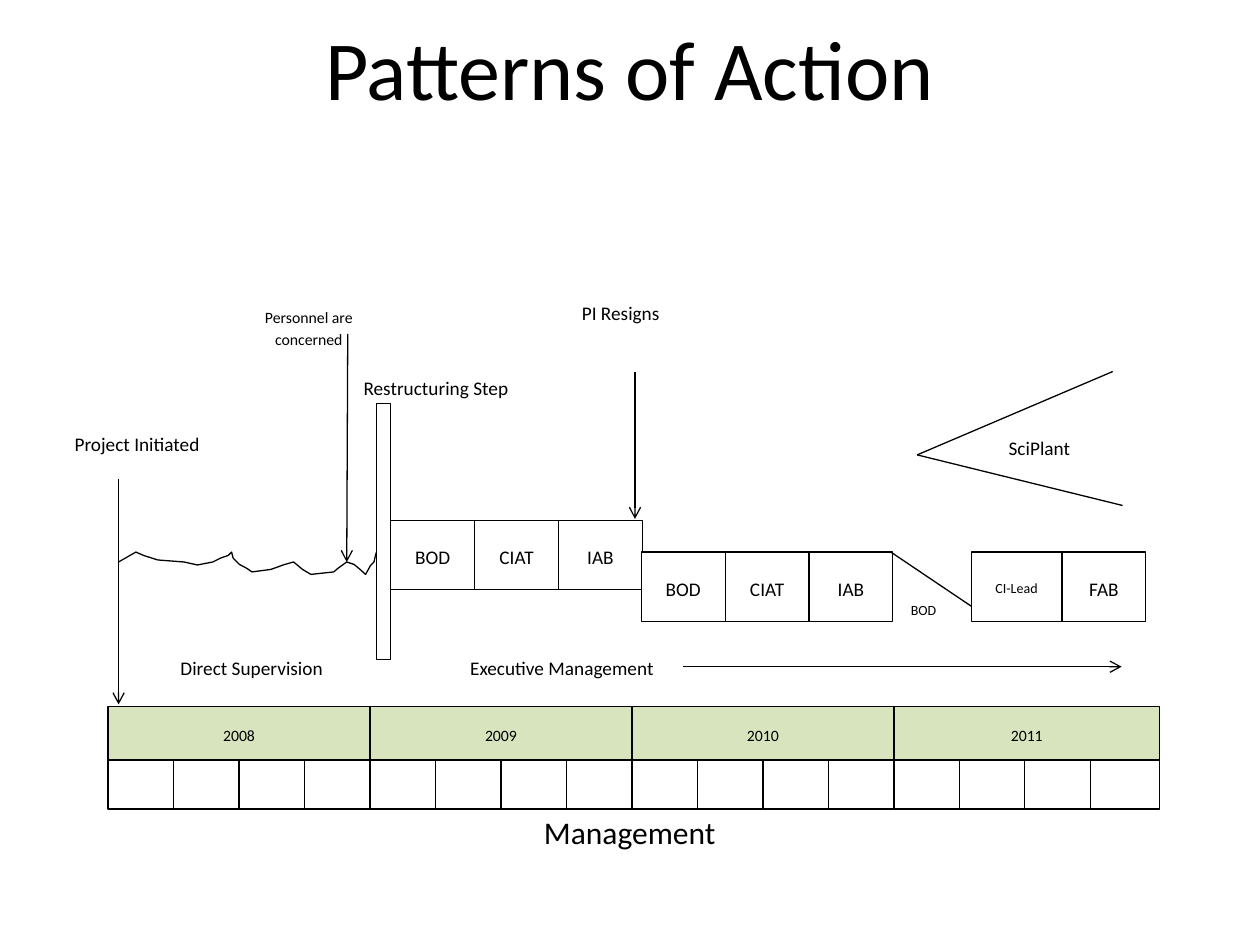
"""Builds the "Patterns of Action" management timeline slide."""
from lxml import etree
from pptx import Presentation
from pptx import util as u
from pptx.dml.color import RGBColor
from pptx.enum import shapes, text
from pptx.oxml import ns

BLACK = RGBColor(0x00, 0x00, 0x00)
WHITE = RGBColor(0xFF, 0xFF, 0xFF)
GREEN = RGBColor(0xD7, 0xE4, 0xBD)
TOP, MIDDLE = text.MSO_ANCHOR.TOP, text.MSO_ANCHOR.MIDDLE
LEFT, CENTER = text.PP_ALIGN.LEFT, text.PP_ALIGN.CENTER


class Timeline:
    """Holds the drawing style and the current slide."""

    font = "Calibri"
    stroke = u.Pt(0.75)

    def __init__(self, slide):
        self.slide = slide

    def letter(self, holder, words, size, anchor=MIDDLE, align=CENTER, spaced=True):
        frame = holder.text_frame
        frame.word_wrap = True
        frame.vertical_anchor = anchor
        paragraph = frame.paragraphs[0]
        paragraph.text = words
        paragraph.alignment = align
        paragraph.font.name = self.font
        paragraph.font.size = u.Pt(size)
        paragraph.font.color.rgb = BLACK
        if spaced:
            paragraph.line_spacing = 1.15
            paragraph.space_after = u.Pt(10)

    def outline(self, part):
        part.line.color.rgb = BLACK
        part.line.width = self.stroke

    def caption(self, words, area, size, anchor=MIDDLE, spaced=False):
        holder = self.slide.shapes.add_textbox(*map(u.Cm, area))
        self.letter(holder, words, size, anchor, spaced=spaced)

    def box(self, area, words="", size=11, fill=WHITE, framed=True, anchor=MIDDLE, align=CENTER):
        block = self.slide.shapes.add_shape(shapes.MSO_SHAPE.RECTANGLE, *map(u.Cm, area))
        block.shadow.inherit = False
        block.fill.solid()
        block.fill.fore_color.rgb = fill
        if framed:
            self.outline(block)
        else:
            block.line.fill.background()
        if words:
            self.letter(block, words, size, anchor, align)

    def line(self, start, end, arrow=False):
        link = self.slide.shapes.add_connector(
            shapes.MSO_CONNECTOR.STRAIGHT, *map(u.Cm, (*start, *end)))
        self.outline(link)
        properties = link._element.spPr
        if arrow:
            etree.SubElement(properties.find(ns.qn("a:ln")), ns.qn("a:tailEnd"), type="arrow")
        etree.SubElement(properties, ns.qn("a:effectLst"))

    def wave(self, points):
        start, *rest = [(u.Cm(x), u.Cm(y)) for x, y in points]
        builder = self.slide.shapes.build_freeform(*start)
        builder.add_line_segments(rest, close=False)
        curve = builder.convert_to_shape()
        curve.shadow.inherit = False
        curve.fill.background()
        self.outline(curve)


LABELS = [
    ("Personnel are concerned", (4.7, 5.26, 3.05, 2.67), 9, MIDDLE, CENTER),
    ("Restructuring Step", (7.04, 7.39, 3.5, 2.67), 11, TOP, CENTER),
    ("SciPlant", (19.81, 8.31, 2.29, 1.35), 11, MIDDLE, CENTER),
    ("Project Initiated", (1.19, 7.57, 3.15, 2.67), 11, MIDDLE, CENTER),
    ("PI Resigns", (11.48, 5.87, 2.87, 1.55), 11, TOP, LEFT),
    ("Direct Supervision", (2.84, 12.62, 4.47, 1.63), 11, MIDDLE, CENTER),
    ("Executive Management", (8.13, 12.67, 6.4, 1.52), 11, MIDDLE, CENTER),
]
SUPERVISION = [
    (2.39, 11.33), (2.74, 11.13), (2.9, 11.2), (3.18, 11.29), (3.71, 11.33),
    (3.98, 11.39), (4.29, 11.33), (4.45, 11.25), (4.6, 11.2), (4.67, 11.13),
    (4.7, 11.25), (4.83, 11.38), (4.98, 11.46), (5.08, 11.53), (5.46, 11.48),
    (5.74, 11.38), (5.92, 11.33), (6.1, 11.48), (6.27, 11.58), (6.73, 11.53),
    (6.81, 11.46), (6.99, 11.33), (7.14, 11.38), (7.26, 11.48), (7.37, 11.58),
    (7.47, 11.4), (7.54, 11.33), (7.57, 11.2), (7.59, 11.13),
]
ARROWS = [
    ((7.01, 6.73), (6.99, 11.33)),
    ((12.8, 7.49), (12.8, 10.46)),
    ((13.77, 13.44), (22.61, 13.44)),
    ((2.39, 9.65), (2.39, 14.2)),
]
STROKES = [
    ((18.49, 9.17), (22.43, 7.49)),
    ((18.49, 9.17), (22.63, 10.19)),
    ((17.96, 11.13), (19.58, 12.22)),
]
BODIES = ("BOD", "CIAT", "IAB")
BODY_W, BODY_H = 1.69, 1.4
YEARS = ("2008", "2009", "2010", "2011")
GRID_LEFT, YEAR_TOP, YEAR_H, QUARTER_H = 2.18, 14.25, 1.07, 0.99
QUARTER_W, LAST_EXTRA = 1.32, 0.08


def main():
    deck = Presentation()
    deck.slide_width, deck.slide_height = u.Cm(25.4), u.Cm(19.05)
    timeline = Timeline(deck.slides.add_slide(deck.slide_layouts[6]))

    timeline.caption("Patterns of Action", (4.34, 0.2, 16.71, 2.31), 48, TOP)
    for words, area, size, anchor, align in LABELS:
        timeline.box(area, words, size, framed=False, anchor=anchor, align=align)

    timeline.wave(SUPERVISION)
    timeline.box((7.59, 8.13, 0.29, 5.16))
    for left, top in ((7.88, 10.49), (12.93, 11.13)):
        for step, body in enumerate(BODIES):
            timeline.box((left + step * BODY_W, top, BODY_W, BODY_H), body)
    timeline.box((19.58, 11.13, 1.83, BODY_H), "CI-Lead", 8)
    timeline.box((21.41, 11.13, BODY_W, BODY_H), "FAB")
    timeline.caption("BOD", (17.96, 11.58, 1.32, BODY_H), 8, spaced=True)

    for index, year in enumerate(YEARS):
        left = GRID_LEFT + index * 4 * QUARTER_W
        extra = LAST_EXTRA if year == YEARS[-1] else 0
        timeline.box((left, YEAR_TOP, 4 * QUARTER_W + extra, YEAR_H), year, 9, GREEN)
        for quarter in range(4):
            width = QUARTER_W + (extra if quarter == 3 else 0)
            timeline.box((left + quarter * QUARTER_W, YEAR_TOP + YEAR_H, width, QUARTER_H))

    for start, end in STROKES:
        timeline.line(start, end)
    for start, end in ARROWS:
        timeline.line(start, end, arrow=True)
    timeline.caption("Management", (10.69, 16.26, 4.01, 1.02), 18)

    deck.save("out.pptx")


if __name__ == "__main__":
    main()
